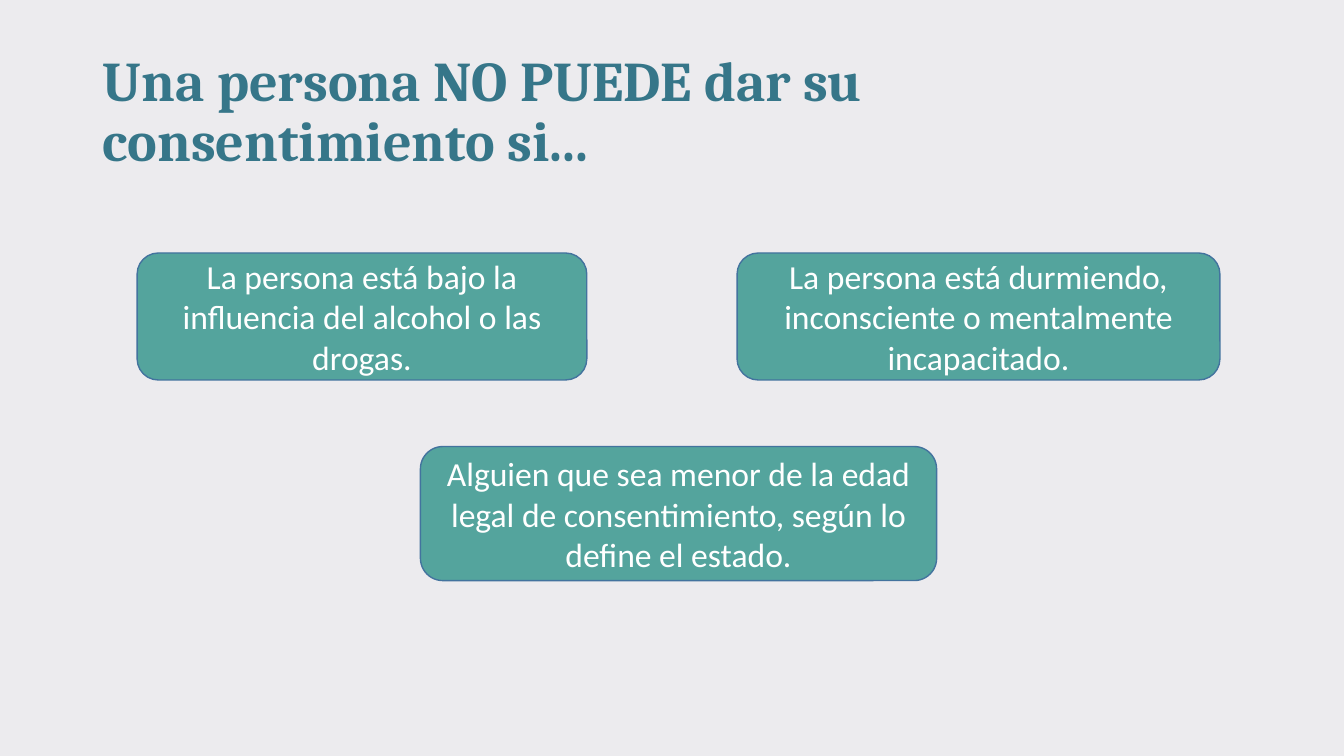
"""Build the slide on when a person cannot give consent."""
from dataclasses import dataclass

import pptx
import pptx.dml.color
import pptx.enum.shapes
import pptx.enum.text
import pptx.shapes.autoshape
import pptx.slide
import pptx.text.text
import pptx.util

WIDTH = pptx.util.Inches(13.33)
HEIGHT = pptx.util.Inches(7.5)
BACKGROUND = "ECEBEE"
HEADING = "367689"
CARD_FILL = "54A49D"
CARD_LINE = "43739E"
CARD_TEXT = "FFFFFF"


@dataclass(frozen=True)
class Area:
    """A rectangle in percentages of the slide's width and height."""

    left: float
    top: float
    width: float
    height: float

    def lengths(self) -> tuple[int, int, int, int]:
        """Return left, top, width and height as slide lengths."""
        return (
            round(WIDTH * self.left / 100),
            round(HEIGHT * self.top / 100),
            round(WIDTH * self.width / 100),
            round(HEIGHT * self.height / 100),
        )


@dataclass(frozen=True)
class Card:
    """One condition and the area that holds it."""

    text: str
    area: Area


TITLE = Card("Una persona NO PUEDE dar su consentimiento si...", Area(6.9, 5.33, 83.95, 19.33))
CARDS = [
    Card(
        "La persona está bajo la influencia del alcohol o las drogas.",
        Area(10.2, 33.47, 33.46, 16.8),
    ),
    Card(
        "La persona está durmiendo, inconsciente o mentalmente incapacitado.",
        Area(54.84, 33.47, 35.93, 16.8),
    ),
    Card(
        "Alguien que sea menor de la edad legal de consentimiento, según lo define el estado.",
        Area(31.28, 59.07, 38.41, 17.73),
    ),
]


def color(value: str) -> pptx.dml.color.RGBColor:
    """Turn a hex string into a colour."""
    return pptx.dml.color.RGBColor.from_string(value)


def write(
    box: pptx.shapes.autoshape.Shape, text: str, font: str, size: int, ink: str
) -> pptx.text.text._Paragraph:
    """Fill a box with one vertically centred paragraph and return it."""
    frame = box.text_frame
    frame.text = text
    frame.word_wrap = True
    frame.auto_size = pptx.enum.text.MSO_AUTO_SIZE.NONE
    frame.vertical_anchor = pptx.enum.text.MSO_ANCHOR.MIDDLE
    para = frame.paragraphs[0]
    para.font.name = font
    para.font.size = pptx.util.Pt(size)
    para.font.color.rgb = color(ink)
    return para


def draw_title(page: pptx.slide.Slide) -> None:
    """Place and format the slide's title."""
    box = page.shapes.title
    box.left, box.top, box.width, box.height = TITLE.area.lengths()
    para = write(box, TITLE.text, "Cambria", 40, HEADING)
    para.font.bold = True
    para.alignment = pptx.enum.text.PP_ALIGN.LEFT
    para.line_spacing = 0.9


def draw_card(page: pptx.slide.Slide, card: Card) -> None:
    """Draw one condition in a rounded rectangle."""
    box = page.shapes.add_shape(
        pptx.enum.shapes.MSO_SHAPE.ROUNDED_RECTANGLE, *card.area.lengths()
    )
    box.shadow.inherit = False
    box.fill.solid()
    box.fill.fore_color.rgb = color(CARD_FILL)
    box.line.color.rgb = color(CARD_LINE)
    box.line.width = pptx.util.Pt(1)
    para = write(box, card.text, "Calibri", 24, CARD_TEXT)
    para.alignment = pptx.enum.text.PP_ALIGN.CENTER


def main() -> None:
    """Build and save the deck."""
    deck = pptx.Presentation()
    deck.slide_width, deck.slide_height = WIDTH, HEIGHT
    page = deck.slides.add_slide(deck.slide_layouts.get_by_name("Title Only"))
    page.background.fill.solid()
    page.background.fill.fore_color.rgb = color(BACKGROUND)
    draw_title(page)
    for card in CARDS:
        draw_card(page, card)
    deck.save("out.pptx")


if __name__ == "__main__":
    main()
